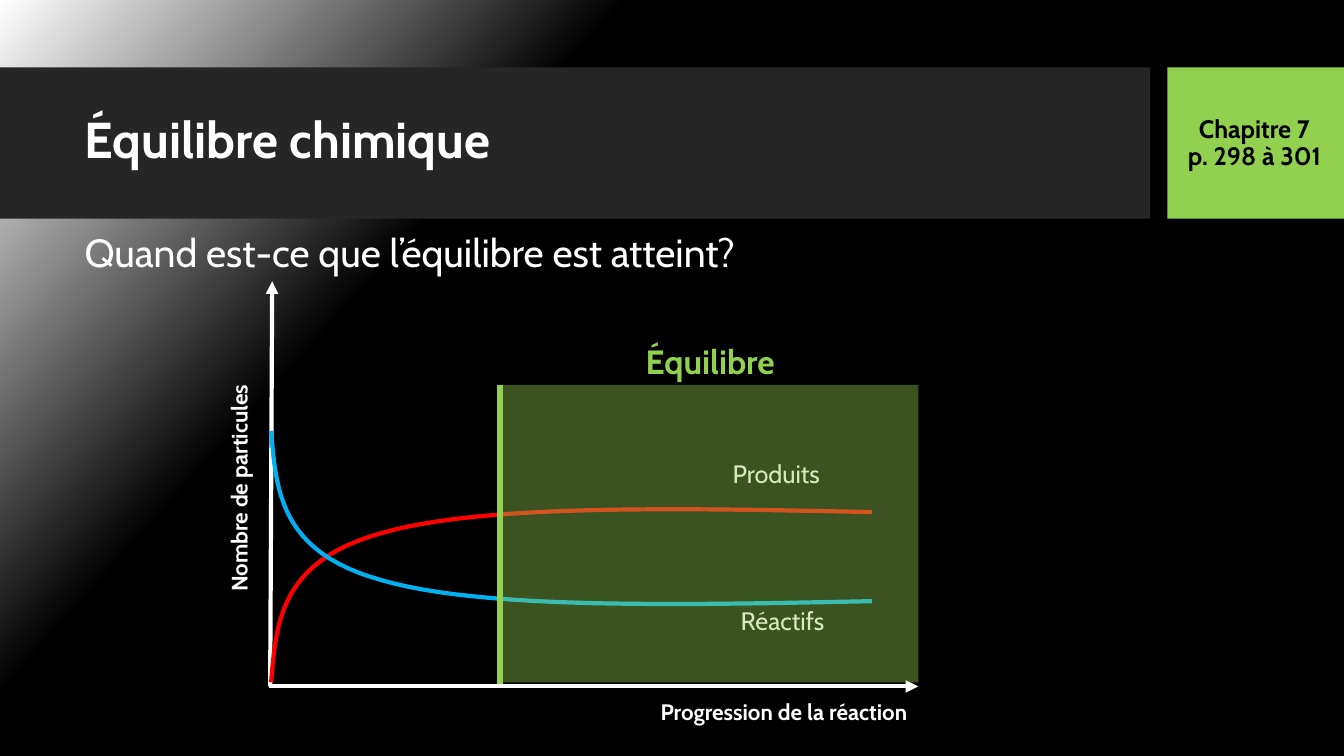
import dataclasses
import typing

import lxml.etree
import pptx
import pptx.dml.color
import pptx.enum.dml
import pptx.enum.shapes
import pptx.enum.text
import pptx.oxml.ns
import pptx.util

Pt = pptx.util.Pt
ALIGN = pptx.enum.text.PP_ALIGN
ANCHOR = pptx.enum.text.MSO_ANCHOR
FIT = pptx.enum.text.MSO_AUTO_SIZE

COLOURS = {
    "white": "FFFFFF",
    "black": "000000",
    "band": "262626",
    "green": "92D050",
    "products": "FF0000",
    "reactants": "00B0F0",
}
FONT = "Cabin"
CURVE_STEPS = 24

Point = tuple[float, float]
Frame = tuple[float, float, float, float]


@dataclasses.dataclass
class Label:
    lines: list[str]
    frame: Frame
    size: float
    bold: bool = False
    colour: str = "white"
    align: ALIGN = ALIGN.LEFT
    anchor: ANCHOR = ANCHOR.TOP
    fit: FIT = FIT.SHAPE_TO_FIT_TEXT
    spacing: float = 1.0
    rotation: float = 0


@dataclasses.dataclass
class Panel:
    frame: Frame
    colour: str
    opacity: int = 100


@dataclasses.dataclass
class Line:
    start: Point
    end: Point
    colour: str
    width: float
    arrow: bool = False


@dataclasses.dataclass
class Curve:
    """Chain of cubic segments: a start, then three points for each segment."""
    points: list[Point]
    colour: str


def rgb(name: str) -> pptx.dml.color.RGBColor:
    return pptx.dml.color.RGBColor.from_string(COLOURS[name])


def add_xml(parent: typing.Any, tag: str, **attributes: str) -> None:
    lxml.etree.SubElement(parent, pptx.oxml.ns.qn(tag), attributes)


def set_background(page: typing.Any) -> None:
    fill = page.background.fill
    fill.gradient()
    fill.gradient_angle = 360 - 42
    for stop, (position, colour) in zip(fill.gradient_stops, [(0, "white"), (0.31, "black")]):
        stop.position = position
        stop.color.rgb = rgb(colour)


def write_label(box: typing.Any, label: Label) -> None:
    box.left, box.top, box.width, box.height = map(Pt, label.frame)
    box.rotation = label.rotation
    frame = box.text_frame
    frame_format = {"word_wrap": True, "auto_size": label.fit, "vertical_anchor": label.anchor}
    for name, value in frame_format.items():
        setattr(frame, name, value)
    font_format = {"name": FONT, "size": Pt(label.size), "bold": label.bold}
    for index, line in enumerate(label.lines):
        para = frame.add_paragraph() if index else frame.paragraphs[0]
        para.alignment = label.align
        para.line_spacing = label.spacing
        span = para.add_run()
        span.text = line
        for name, value in font_format.items():
            setattr(span.font, name, value)
        span.font.color.rgb = rgb(label.colour)


def add_label(page: typing.Any, label: Label) -> None:
    write_label(page.shapes.add_textbox(*map(Pt, label.frame)), label)


def add_panel(page: typing.Any, panel: Panel) -> None:
    box = page.shapes.add_shape(pptx.enum.shapes.MSO_SHAPE.RECTANGLE, *map(Pt, panel.frame))
    box.shadow.inherit = False
    box.fill.solid()
    box.fill.fore_color.rgb = rgb(panel.colour)
    box.line.fill.background()
    if panel.opacity < 100:
        colour = box.fill._xPr.find(".//" + pptx.oxml.ns.qn("a:srgbClr"))
        add_xml(colour, "a:alpha", val=str(panel.opacity * 1000))


def add_line(page: typing.Any, line: Line) -> None:
    straight = pptx.enum.shapes.MSO_CONNECTOR.STRAIGHT
    connector = page.shapes.add_connector(straight, *map(Pt, line.start + line.end))
    connector.line.color.rgb = rgb(line.colour)
    connector.line.width = Pt(line.width)
    if line.arrow:
        add_xml(connector.line._get_or_add_ln(), "a:tailEnd", type="triangle")
    add_xml(connector._element.spPr, "a:effectLst")


def cubic(a: float, b: float, c: float, d: float, t: float) -> float:
    u = 1 - t
    return u**3 * a + 3 * u * u * t * b + 3 * u * t * t * c + t**3 * d


def add_curve(page: typing.Any, curve: Curve) -> None:
    vertices = []
    for first in range(0, len(curve.points) - 1, 3):
        xs, ys = zip(*curve.points[first:first + 4])
        for step in range(1, CURVE_STEPS + 1):
            t = step / CURVE_STEPS
            vertices.append((Pt(cubic(*xs, t)), Pt(cubic(*ys, t))))
    builder = page.shapes.build_freeform(*map(Pt, curve.points[0]))
    builder.add_line_segments(vertices, close=False)
    trace = builder.convert_to_shape()
    trace.shadow.inherit = False
    trace.fill.background()
    trace.line.color.rgb = rgb(curve.colour)
    trace.line.width = Pt(3)


TITLE = Label(["Équilibre chimique"], (53.3, 59, 756.7, 85), 36, True,
              anchor=ANCHOR.MIDDLE, fit=FIT.NONE, spacing=0.9)
BANDS = [
    Panel((0, 48.2, 821.5, 108), "band"),
    Panel((833.8, 48.2, 126.2, 108), "green"),
]
CHAPTER = Label(["Chapitre 7", "p. 298 à 301"], (832.3, 48.2, 127.4, 108.7), 18, True, "black",
                ALIGN.CENTER, ANCHOR.MIDDLE, FIT.NONE, 0.9)
AXES = [
    Line((193, 490.3), (194.4, 200.9), "white", 3, True),
    Line((192.2, 490.3), (655.9, 490.3), "white", 3, True),
]
PRODUCT_POINTS = [(193.7, 487.4), (197.3, 444.2), (200.2, 401), (272.2, 380.9),
                  (343.4, 360), (483.1, 362.9), (622.8, 365.8)]
MIRROR_SUM = 795.2
CURVES = [
    Curve(PRODUCT_POINTS, "products"),
    Curve([(x, MIRROR_SUM - y) for x, y in PRODUCT_POINTS], "reactants"),
]
GRAPH_LABELS = [
    Label(["Nombre de particules"], (42.5, 335.5, 256.3, 26.6), 16, True,
          align=ALIGN.CENTER, rotation=270),
    Label(["Progression de la réaction"], (378.7, 495.4, 276.5, 33.1), 16, True,
          align=ALIGN.RIGHT),
    Label(["Produits"], (516.2, 324, 106.6, 36), 18),
    Label(["Réactifs"], (522, 429.1, 106.6, 36), 18),
]
THRESHOLD = Line((357.1, 488.9), (357.1, 275), "green", 4.5)
EQUILIBRIUM_ZONE = Panel((358.6, 275, 297.4, 212.4), "green", 40)
HEADINGS = [
    Label(["Quand est-ce que l’équilibre est atteint?"], (53.3, 159.8, 756.7, 41), 28),
    Label(["Équilibre"], (358.6, 239.8, 297.4, 36), 24, True, "green", ALIGN.CENTER),
]


def main() -> None:
    deck = pptx.Presentation()
    deck.slide_width, deck.slide_height = Pt(960), Pt(540)
    page = deck.slides.add_slide(deck.slide_layouts.get_by_name("Title Only"))
    set_background(page)
    for band in BANDS:
        add_panel(page, band)
    title = page.shapes.title
    write_label(title, TITLE)
    page.shapes._spTree.append(title._element)
    add_label(page, CHAPTER)
    for axis in AXES:
        add_line(page, axis)
    for curve in CURVES:
        add_curve(page, curve)
    for label in GRAPH_LABELS:
        add_label(page, label)
    add_line(page, THRESHOLD)
    add_panel(page, EQUILIBRIUM_ZONE)
    for heading in HEADINGS:
        add_label(page, heading)
    deck.save("out.pptx")


if __name__ == "__main__":
    main()
